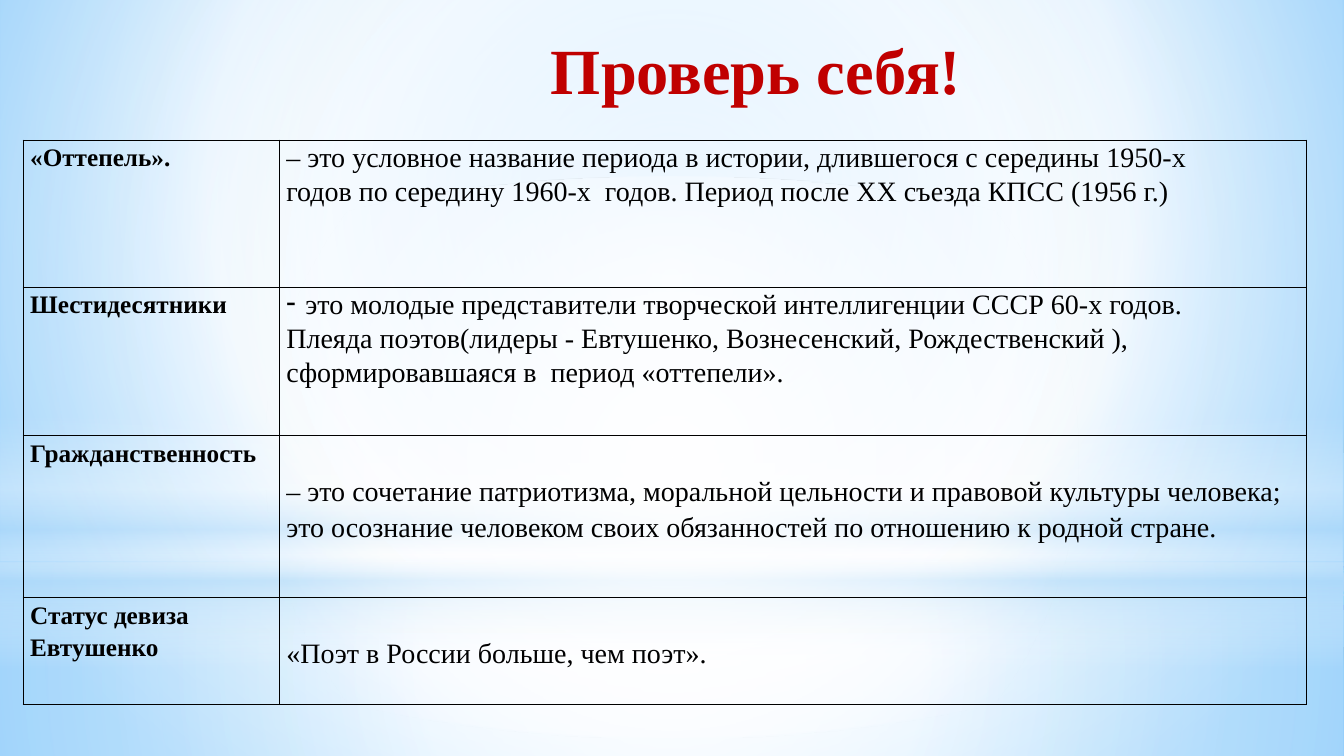
from dataclasses import dataclass
from typing import Optional

from lxml.etree import SubElement
from pptx import Presentation
from pptx.dml.color import RGBColor
from pptx.enum.shapes import MSO_SHAPE as Shape
from pptx.enum.text import MSO_ANCHOR as Anchor, MSO_AUTO_SIZE as AutoSize, PP_ALIGN as Align
from pptx.oxml.ns import qn
from pptx.util import Inches, Pt

FONT = "Times New Roman"
COLORS = {"title": "C00000", "text": "000000", "border": "000000",
          "white": "FFFFFF", "pale": "B4DCFA", "sky": "9ED5FF", "blue": "5BB9FF"}


@dataclass(frozen=True)
class Stop:
    position: int
    color: str
    opacity: int = 100


@dataclass(frozen=True)
class Gradient:
    stops: tuple[Stop, ...]
    center: Optional[tuple[int, int, int, int]] = (50, 50, 50, 50)  # None: vertical


@dataclass(frozen=True)
class Glow:
    kind: Shape
    top: float
    height: float
    gradient: Gradient


@dataclass(frozen=True)
class Term:
    name: str
    lines: tuple[str, ...]
    height: float
    spacing: object = 1.15
    top_margin: float = 0
    dashed: bool = False  # the first line carries a dash bullet


BACKGROUND = Gradient((Stop(0, "sky"), Stop(60, "white"), Stop(100, "blue")), (20, 10, 20, 60))
GLOWS = (
    Glow(Shape.RECTANGLE, 5.58, 1.92, Gradient(
        (Stop(0, "white", 91), Stop(37, "white", 76), Stop(100, "pale", 79)))),
    Glow(Shape.RECTANGLE, 0, 5.58, Gradient(
        (Stop(0, "white", 89), Stop(48, "white", 62), Stop(100, "pale", 79)))),
    Glow(Shape.RECTANGLE, 4.12, 2.5, Gradient(
        (Stop(0, "white", 0), Stop(29, "white", 30), Stop(45, "pale", 40),
         Stop(55, "white", 26), Stop(65, "pale", 60), Stop(100, "white", 0)), None)),
    Glow(Shape.OVAL, 1.75, 5.58, Gradient((Stop(0, "white"), Stop(56, "white", 0)))),
)
TERMS = (
    Term("«Оттепель».", (
        "– это условное название периода в истории, длившегося с середины 1950-х",
        "годов по середину 1960-х  годов. Период после XX съезда КПСС (1956 г.)",
    ), 1.46, Pt(24)),
    Term("Шестидесятники", (
        "это молодые представители творческой интеллигенции СССР 60-х годов.",
        "Плеяда поэтов(лидеры - Евтушенко, Вознесенский, Рождественский ),",
        "сформировавшаяся в  период «оттепели».",
    ), 1.47, Pt(24), dashed=True),
    Term("Гражданственность", (
        "– это сочетание патриотизма, моральной цельности и правовой культуры человека; "
        "это осознание человеком своих обязанностей по отношению к родной стране.",
    ), 1.61, top_margin=0.36),
    Term("Статус девиза Евтушенко", ("«Поэт в России больше, чем поэт».",), 1.06,
         top_margin=0.36),
)
COLUMN_WIDTHS = (2.54, 10.19)


def paint_gradient(owner, gradient: Gradient) -> None:
    """Refill the gradient element found inside the owner element."""
    fill = owner.find(".//" + qn("a:gradFill"))
    fill.clear()
    fill.set("rotWithShape", "1")
    stop_list = SubElement(fill, qn("a:gsLst"))
    for stop in gradient.stops:
        entry = SubElement(stop_list, qn("a:gs"), pos=str(stop.position * 1000))
        color = SubElement(entry, qn("a:srgbClr"), val=COLORS[stop.color])
        if stop.opacity < 100:
            SubElement(color, qn("a:alpha"), val=str(stop.opacity * 1000))
    if gradient.center is None:
        SubElement(fill, qn("a:lin"), ang="5400000", scaled="0")
    else:
        circle = SubElement(fill, qn("a:path"), path="circle")
        sides = {side: str(value * 1000) for side, value in zip("ltrb", gradient.center)}
        SubElement(circle, qn("a:fillToRect"), **sides)


def add_glow(slide, glow: Glow, width: int) -> None:
    shape = slide.shapes.add_shape(glow.kind, 0, Inches(glow.top), width, Inches(glow.height))
    shape.shadow.inherit = False
    shape.line.fill.background()
    shape.fill.gradient()
    paint_gradient(shape._element.spPr, glow.gradient)


def add_text(paragraph, text: str, size: int, color: str, bold: bool) -> None:
    run = paragraph.add_run()
    run.text = text
    run.font.name = FONT
    run.font.size = Pt(size)
    run.font.bold = bold
    run.font.color.rgb = RGBColor.from_string(COLORS[color])


def add_dash(paragraph) -> None:
    properties = paragraph._p.get_or_add_pPr()
    properties.set("marL", str(Inches(0.19)))
    properties.set("indent", str(-Inches(0.19)))
    SubElement(properties, qn("a:buChar"), char="-")


def format_cell(cell, top_margin: float = 0) -> None:
    cell.margin_left = cell.margin_right = Inches(0.07)
    cell.margin_top, cell.margin_bottom = Inches(top_margin), 0
    properties = cell._tc.get_or_add_tcPr()
    for side in ("lnL", "lnR", "lnT", "lnB"):
        line = SubElement(properties, qn("a:" + side), w=str(Pt(1)))
        SubElement(SubElement(line, qn("a:solidFill")), qn("a:srgbClr"), val=COLORS["border"])
    cell.fill.background()


def fill_cell(cell, lines: tuple[str, ...], size: int, bold: bool, spacing) -> None:
    frame = cell.text_frame
    for index, line in enumerate(lines):
        paragraph = frame.add_paragraph() if index else frame.paragraphs[0]
        paragraph.line_spacing = spacing
        add_text(paragraph, line, size, "text", bold)


def add_terms(slide) -> None:
    heights = [term.height for term in TERMS]
    table = slide.shapes.add_table(
        len(TERMS), len(COLUMN_WIDTHS), Inches(0.23), Inches(1.39),
        Inches(sum(COLUMN_WIDTHS)), Inches(sum(heights))).table
    table.first_row = table.horz_banding = False
    for column, width in zip(table.columns, COLUMN_WIDTHS):
        column.width = Inches(width)
    for row, term in zip(table.rows, TERMS):
        row.height = Inches(term.height)
        name_cell, meaning_cell = row.cells
        format_cell(name_cell)
        fill_cell(name_cell, (term.name,), 18, True, 1.15)
        format_cell(meaning_cell, term.top_margin)
        fill_cell(meaning_cell, term.lines, 20, False, term.spacing)
        if term.dashed:
            add_dash(meaning_cell.text_frame.paragraphs[0])


def add_title(slide) -> None:
    title = slide.shapes.title
    title.left, title.top = Inches(2.83), Inches(0.17)
    title.width, title.height = Inches(9.5), Inches(0.75)
    frame = title.text_frame
    frame.auto_size = AutoSize.NONE
    frame.vertical_anchor = Anchor.TOP
    frame.margin_top, frame.margin_bottom = Inches(0.13), 0
    paragraph = frame.paragraphs[0]
    paragraph.alignment = Align.CENTER
    add_text(paragraph, "Проверь себя! ", 46, "title", True)
    # Bring the title in front of the glows
    slide.shapes._spTree.append(title._element)


def main() -> None:
    presentation = Presentation()
    presentation.slide_width, presentation.slide_height = Inches(13.33), Inches(7.5)
    slide = presentation.slides.add_slide(presentation.slide_layouts[5])

    # Background and soft light
    slide.background.fill.gradient()
    paint_gradient(slide._element, BACKGROUND)
    for glow in GLOWS:
        add_glow(slide, glow, presentation.slide_width)

    # Title and table of terms
    add_title(slide)
    add_terms(slide)
    presentation.save("out.pptx")


if __name__ == "__main__":
    main()
